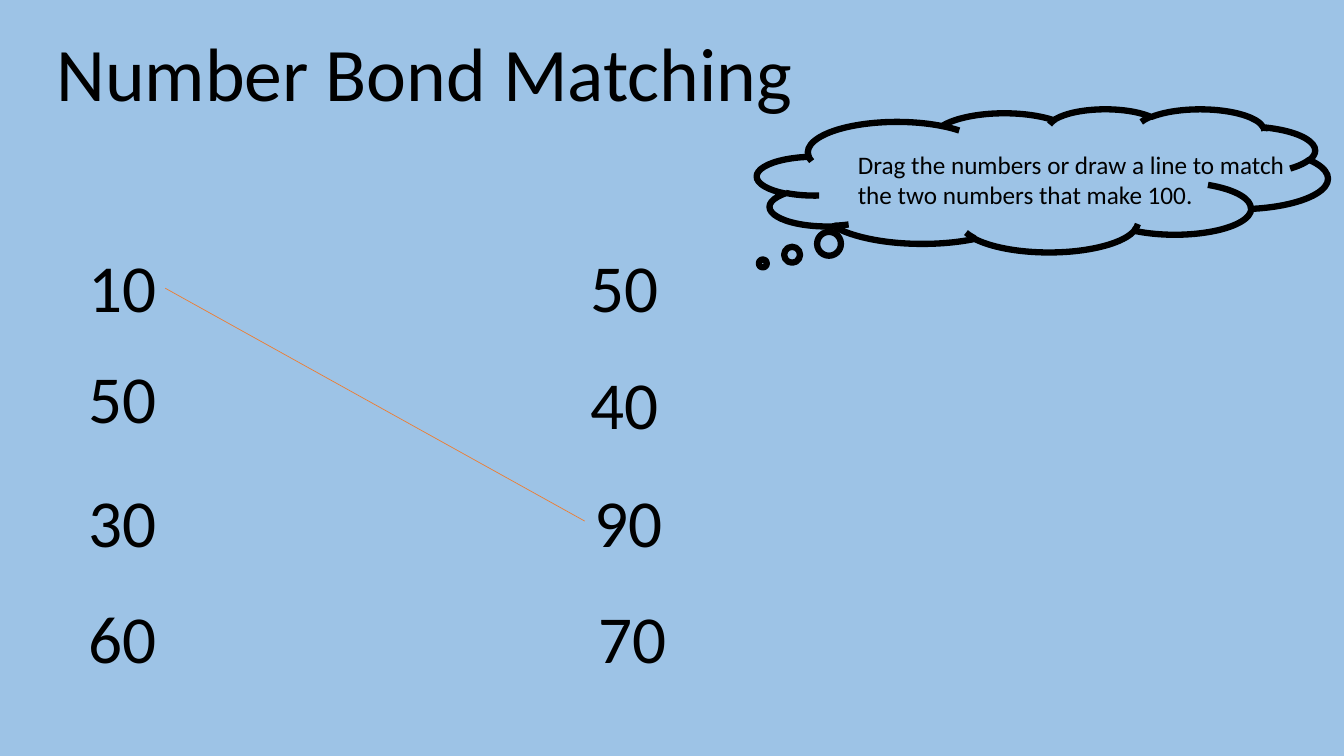
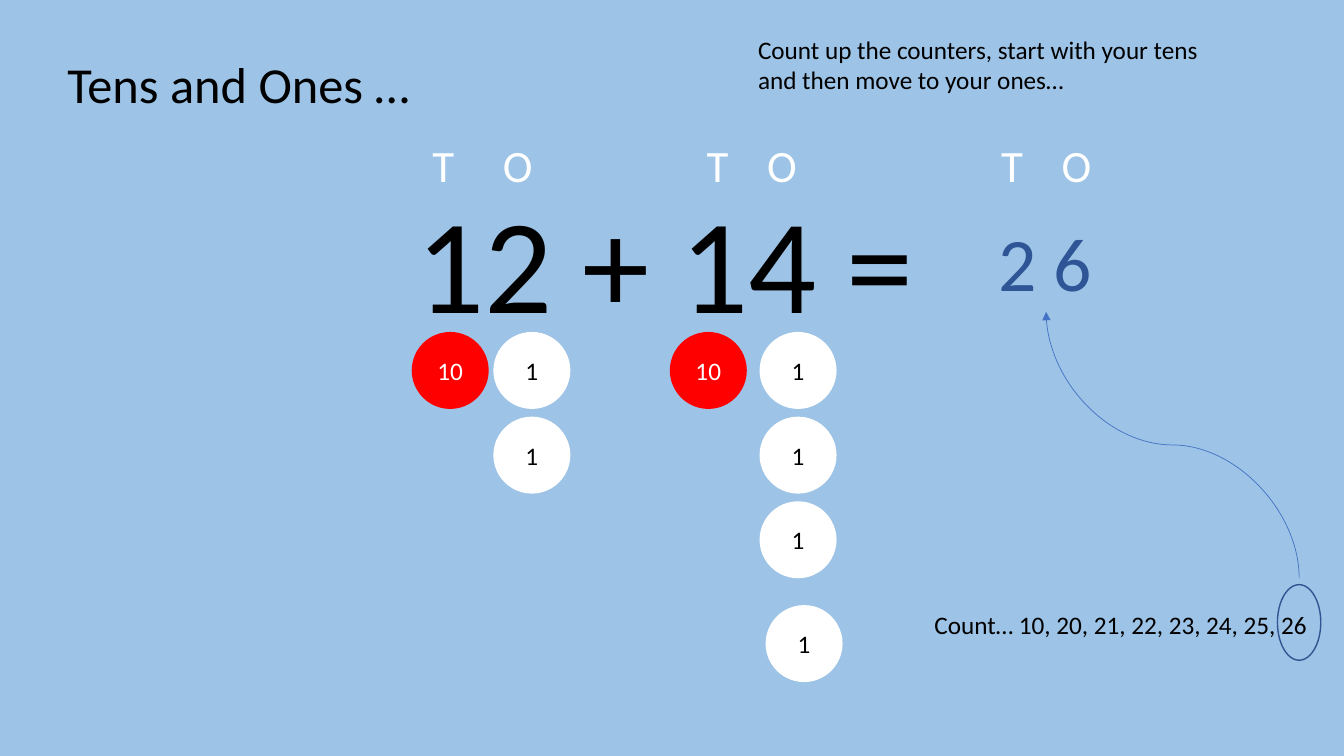
from pptx import Presentation
from pptx.dml.color import RGBColor
from pptx.enum.shapes import MSO_CONNECTOR as Connector, MSO_SHAPE as Preset
from pptx.enum.text import MSO_ANCHOR as Anchor, PP_ALIGN as Align
from pptx.oxml.ns import qn
from pptx.util import Pt
from lxml.etree import SubElement

PX = 9144  # 100 px to the inch
FONT = "Calibri"
COLOURS = {
    "sky": "9DC3E6",
    "black": "000000",
    "white": "FFFFFF",
    "red": "FF0000",
    "orange": "ED7D31",
    "blue": "4472C4",
    "ring": "325491",
    "answer": "2F5597",
}


def colour(name):
    return RGBColor.from_string(COLOURS[name])


def write(shape, text, size, ink="black", align=Align.LEFT):
    """Fill a shape or text box with text in one style."""
    shape.text_frame.word_wrap = True
    shape.text_frame.text = text
    for paragraph in shape.text_frame.paragraphs:
        paragraph.alignment = align
        for run in paragraph.runs:
            run.font.name = FONT
            run.font.size = Pt(size)
            run.font.color.rgb = colour(ink)
    return shape


presentation = Presentation()
presentation.slide_width = 1333 * PX
presentation.slide_height = 750 * PX

slides = []
for _ in range(2):
    slide = presentation.slides.add_slide(presentation.slide_layouts[6])
    slide.background.fill.solid()
    slide.background.fill.fore_color.rgb = colour("sky")
    slides.append(slide)
matching, counting = slides

# Text boxes: slide, left, top, width, height, text, size, ink
text_boxes = [
    (matching, 42, 21, 758, 101, "Number Bond Matching", 54, "black"),
    (matching, 841, 143, 476, 71,
     "Drag the numbers or draw a line to match the two numbers that make 100.", 18, "black"),
    (counting, 57, 48, 427, 71, "Tens and Ones …", 36, "black"),
    (counting, 403, 173, 545, 172, "12 + 14 =", 96, "black"),
    (counting, 742, 29, 476, 71,
     "Count up the counters, start with your tens\nand then move to your ones…", 18, "black"),
    (counting, 917, 600, 400, 40, "Count… 10, 20, 21, 22, 23, 24, 25, 26", 18, "black"),
    (counting, 980, 209, 145, 101, "2 6", 54, "answer"),
]
row_tops = (238, 349, 472, 587)
for top, number in zip(row_tops, ("10", "50", "30", "60")):
    text_boxes.append((matching, 78, top, 104, 91, number, 48, "black"))
for left, top, number in ((576, 238, "50"), (576, 355, "40"), (580, 472, "90"), (584, 587, "70")):
    text_boxes.append((matching, left, top, 104, 91, number, 48, "black"))

for slide, left, top, width, height, text, size, ink in text_boxes:
    box = slide.shapes.add_textbox(left * PX, top * PX, width * PX, height * PX)
    write(box, text, size, ink)

title = matching.shapes[0].text_frame
title.word_wrap = False
title.paragraphs[0].alignment = Align.CENTER

# Tens and ones headings, spaced with tab stops
headings = counting.shapes.add_textbox(419 * PX, 132 * PX, 718 * PX, 64 * PX)
write(headings, "T\tO\tT\tO\tT\tO", 32, "white")
properties = headings.text_frame.paragraphs[0]._p.get_or_add_pPr()
tab_list = SubElement(properties, qn("a:tabLst"))
for stop in (70, 272, 332, 564, 624):
    SubElement(tab_list, qn("a:tab"), pos=str(stop * PX), algn="l")

# Outlined shapes: slide, preset, left, top, width, height, line colour, line width
outlines = [
    (matching, Preset.CLOUD_CALLOUT, 751, 108, 566, 142, "black", 4.5),
    (counting, Preset.OVAL, 1267, 580, 43, 75, "ring", 1),
]
for slide, preset, left, top, width, height, ink, weight in outlines:
    shape = slide.shapes.add_shape(preset, left * PX, top * PX, width * PX, height * PX)
    shape.shadow.inherit = False
    shape.fill.background()
    shape.line.color.rgb = colour(ink)
    shape.line.width = Pt(weight)
    if preset == Preset.CLOUD_CALLOUT:
        shape.adjustments[0] = -0.49
        shape.adjustments[1] = 0.58

# Counters: left, top, label
COUNTER = 75
counters = [(409, 330, "10"), (665, 330, "10"), (760, 601, "1")]
for left, count in ((490, 2), (754, 3)):
    counters += [(left, 330 + 84 * row, "1") for row in range(count)]
for left, top, label in counters:
    face, ink = ("red", "white") if label == "10" else ("white", "black")
    counter = counting.shapes.add_shape(
        Preset.OVAL, left * PX, top * PX, COUNTER * PX, COUNTER * PX)
    counter.shadow.inherit = False
    counter.fill.solid()
    counter.fill.fore_color.rgb = colour(face)
    counter.line.color.rgb = colour(face)
    counter.line.width = Pt(1)
    counter.text_frame.vertical_anchor = Anchor.MIDDLE
    write(counter, label, 18, ink, Align.CENTER)

# Connectors: slide, kind, begin x, begin y, end x, end y, colour
connectors = [
    (matching, Connector.STRAIGHT, 164, 286, 580, 517, "orange"),
    (counting, Connector.CURVE, 1031, 567, 1295, 316, "blue"),
]
for slide, kind, x1, y1, x2, y2, ink in connectors:
    connector = slide.shapes.add_connector(kind, x1 * PX, y1 * PX, x2 * PX, y2 * PX)
    connector.line.color.rgb = colour(ink)
    connector.line.width = Pt(0.5)
    shape_properties = connector.element.spPr
    if kind == Connector.CURVE:
        # A quarter turn makes the curve leave and arrive vertically
        shape_properties.find(qn("a:xfrm")).set("rot", str(270 * 60000))
        SubElement(shape_properties.find(qn("a:ln")), qn("a:tailEnd"), type="triangle")
    SubElement(shape_properties, qn("a:effectLst"))

presentation.save("out.pptx")
